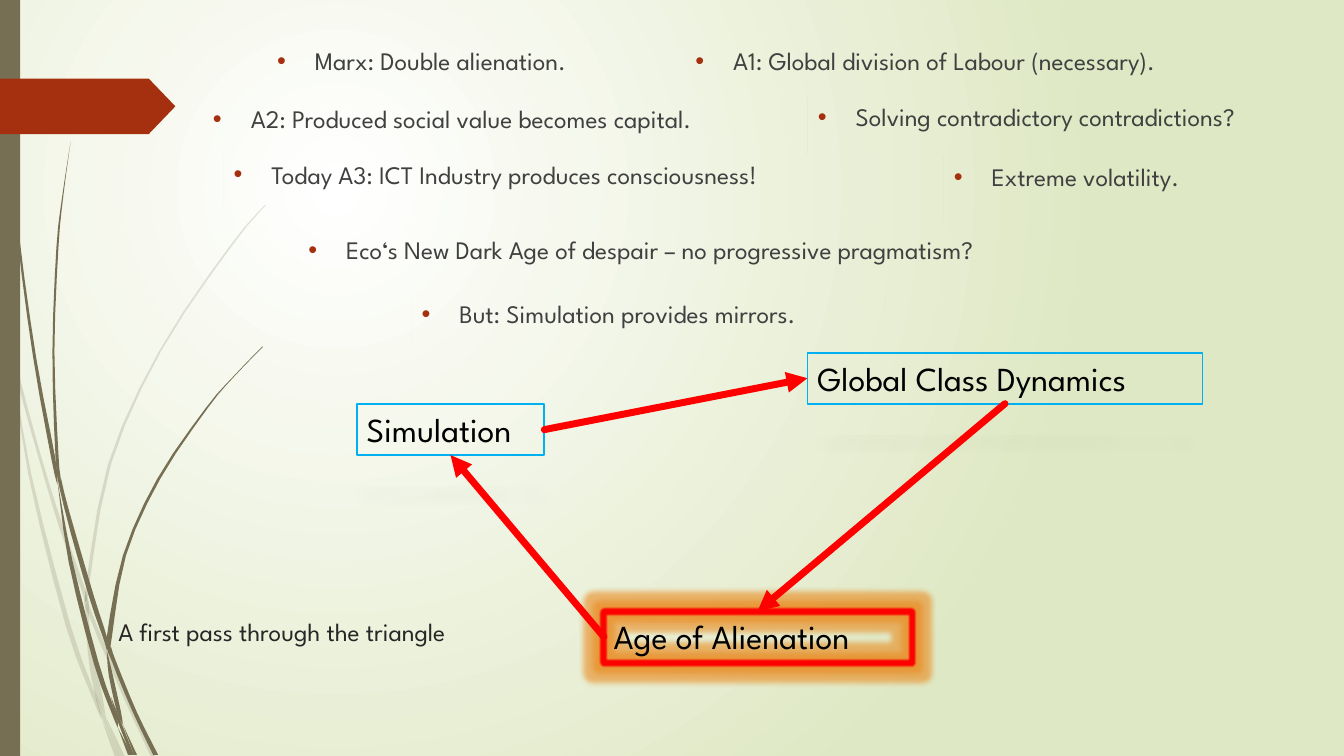
import pptx
import pptx.util
import pptx.dml.color
import pptx.enum.shapes
import pptx.enum.text
import pptx.oxml.ns
import lxml.etree

SHAPE = pptx.enum.shapes.MSO_SHAPE
LEFT, TOP, LOW, RIGHT = 1, 0, 2, 3

POINTS = [
    (26.5, 4, 36, 5.4, False, "Marx: Double alienation."),
    (68, 4, 57, 5.7, False, "A1: Global division of Labour (necessary)."),
    (20.15, 9.8, 60, 4.6, False, "A2: Produced social value becomes capital."),
    (80.15, 9.6, 53.2, 5.7, True, "Solving contradictory contradictions?"),
    (22.2, 15.3, 63.6, 5, True, "Today A3: ICT Industry produces consciousness!"),
    (93.65, 15.5, 29.4, 6.2, True, "Extreme volatility."),
    (29.6, 22.75, 89.8, 6.2, True, "Eco‘s New Dark Age of despair – no progressive pragmatism?"),
    (40.85, 29.1, 47, 5.5, True, "But: Simulation provides mirrors."),
]

PALE = [
    [(0, 0, 28.2), (0, .4, 29.9), (.7, .9, 32.2), (1.1, 1.1, 35)],
    [(1.4, 1.4, 34.5), (1.7, 2, 37.6), (3.7, 4, 45), (5.8, 6.2, 52.1), (8.1, 8.5, 58.6),
     (8.4, 8.4, 59.9)],
    [(8.8, 8.8, 59.6), (8.8, 9.2, 61), (12.3, 12.7, 69.3), (15, 15.5, 75.1)],
    [(10.5, 10.5, 71.1), (11.9, 12.4, 75.1)],
    [(1.1, 1.1, 35), (2.8, 3.1, 47), (6.5, 7, 62), (9.2, 9.6, 69.3), (10.1, 10.1, 71.4)],
    [(8.4, 8.4, 59.9), (8.5, 8.8, 61), (8.7, 9.1, 64.6), (9.3, 10, 68.3), (10.5, 10.5, 71.1)],
    [(31.2, 31.2, 15.3), (26.8, 26.9, 19.8), (22.8, 23, 24.4), (15.8, 16, 34.8), (10.7, 11, 46.1),
     (8.5, 8.8, 58.4), (8.8, 8.8, 59.6)],
    [(10.1, 10.1, 71.4), (11.4, 11.9, 75.1)],
    [(8.5, 8.5, 58.6), (8.4, 8.8, 59.9), (8.8, 8.8, 61)],
    [(9.3, 9.3, 68.3), (9.9, 10.3, 70.7), (11.9, 11.9, 75.1)],
]
DARK = [
    [(.3, .4, 0), (.7, .8, 11), (1.7, 1.9, 23.3), (3.3, 3.6, 35.5), (5.1, 5.5, 45.5),
     (5.7, 5.7, 48.1)],
    [(6, 6, 47.2), (6.4, 6.8, 50.5), (8.8, 9.3, 59.1), (10.2, 10.6, 63.2), (10.6, 10.6, 64.5)],
    [(11, 11, 64.1), (11.1, 11.5, 65.6), (13.2, 13.6, 70.7), (15.2, 15.7, 74.9)],
    [(5.7, 5.7, 47.7), (6.8, 7.2, 55.7), (9.3, 9.8, 65.8), (11.1, 11.5, 70.8), (11.7, 11.7, 72.2)],
    [(7, 7, 14.1), (6.2, 6.3, 19.3), (5.6, 5.8, 24.5), (5.2, 5.4, 34.9), (5.5, 5.8, 45.1),
     (6, 6, 47.2)],
    [(12.2, 12.2, 71.9), (13.3, 13.6, 74.9)],
    [(5.5, 5.5, 44.9), (5.7, 6, 47.4), (6.4, 6.4, 50.5)],
    [(26, 26.1, 34.4), (23.1, 23.2, 37.4), (20.4, 20.6, 40.5), (15.6, 15.9, 47.5),
     (12.2, 12.5, 55.1), (10.6, 11.1, 63.2), (11, 11, 64.1)],
    [(11.7, 11.7, 72.2), (12.7, 13.1, 74.9)],
    [(10.6, 10.6, 64.5), (10.8, 11.2, 67), (11.6, 12, 70.6), (12.2, 12.2, 71.9)],
    [(10.6, 10.6, 63.1), (10.6, 11, 64.3), (11.1, 11.1, 65.6)],
    [(11, 11, 69.1), (11.7, 12, 71.6), (13, 13.3, 74.9)],
]


def hue(code):
    return pptx.dml.color.RGBColor.from_string(code)


def cell(count):
    return pptx.util.Emu(round(count * 91440))


def tag(parent, name, **attrs):
    node = lxml.etree.SubElement(parent, pptx.oxml.ns.qn(name))
    for key, value in attrs.items():
        node.set(key, str(value))
    return node


def tint(parent, code, alpha):
    tag(tag(parent, "a:srgbClr", val=code), "a:alpha", val=alpha * 1000)


def write(shape, text, size=18, color="404040", font="League Spartan", bullet=None):
    frame = shape.text_frame
    frame.word_wrap = True
    frame.vertical_anchor = pptx.enum.text.MSO_ANCHOR.TOP
    para = frame.paragraphs[0]
    para.alignment = pptx.enum.text.PP_ALIGN.LEFT
    run = para.add_run()
    run.text = text
    run.font.size = pptx.util.Pt(size)
    run.font.name = font
    run.font.color.rgb = hue(color)
    if bullet:
        para.space_before = pptx.util.Pt(10)
        props = para._p.get_or_add_pPr()
        props.set("marL", str(cell(3.75)))
        props.set("indent", str(-cell(3.75)))
        tag(tag(props, "a:buClr"), "a:srgbClr", val=bullet)
        tag(props, "a:buFont", typeface="Arial")
        tag(props, "a:buChar", char="•")


def smooth(knots, steps=3):
    ends = [knots[0], *knots, knots[-1]]
    for a, b, c, d in zip(ends, ends[1:], ends[2:], ends[3:]):
        for step in range(steps):
            t = step / steps
            yield [q + t / 2 * (r - p + t * (2 * p - 5 * q + 4 * r - s
                                             + t * (3 * q - p - 3 * r + s)))
                   for p, q, r, s in zip(a, b, c, d)]
    yield knots[-1]


class Deck:
    olive, rust, red, sky = "766F54", "A53010", "FF0000", "00B0F0"
    white, sage = "FFFFFF", "DFE8C4"

    def __init__(self):
        self.show = pptx.Presentation()
        self.show.slide_width = cell(133.33)
        self.show.slide_height = cell(75)
        self.slide = self.show.slides.add_slide(self.show.slide_layouts[6])
        self.shapes = self.slide.shapes

    def ground(self):
        fill = self.slide.background.fill
        fill.gradient()
        for place, (stop, code) in enumerate(zip(fill.gradient_stops, (self.white, self.sage))):
            stop.color.rgb = hue(code)
            stop.position = place
        grad = self.slide.element.find(".//" + pptx.oxml.ns.qn("a:gradFill"))
        grad.remove(grad.find(pptx.oxml.ns.qn("a:lin")))
        tag(tag(grad, "a:path", path="circle"), "a:fillToRect",
            l=50000, t=50000, r=100000, b=100000)

    def paint(self, shape, code):
        shape.shadow.inherit = False
        shape.line.fill.background()
        shape.fill.solid()
        shape.fill.fore_color.rgb = hue(code)

    def block(self, kind, x, y, w, h, code):
        shape = self.shapes.add_shape(kind, cell(x), cell(y), cell(w), cell(h))
        self.paint(shape, code)
        return shape

    def blade(self, knots, alpha=100):
        rows = list(smooth(knots))
        edge = [(cell(a), cell(y)) for a, b, y in rows]
        edge += [(cell(b), cell(y)) for a, b, y in reversed(rows)]
        pen = self.shapes.build_freeform(*edge[0])
        pen.add_line_segments(edge[1:], close=True)
        shape = pen.convert_to_shape()
        self.paint(shape, self.olive)
        if alpha < 100:
            color = shape.element.spPr.find(".//" + pptx.oxml.ns.qn("a:srgbClr"))
            tag(color, "a:alpha", val=alpha * 1000)

    def note(self, x, y, w, h, text, cover=False, **style):
        box = self.shapes.add_textbox(cell(x), cell(y), cell(w), cell(h))
        if cover:
            spot = box.element.spPr.find(pptx.oxml.ns.qn("a:noFill"))
            box.element.spPr.remove(spot)
            box.element.set("useBgFill", "1")
        write(box, text, **style)

    def node(self, x, y, w, text, code, weight, glow=False):
        box = self.shapes.add_shape(SHAPE.RECTANGLE, cell(x), cell(y), cell(w), cell(5.05))
        box.fill.background()
        box.line.color.rgb = hue(code)
        box.line.width = pptx.util.Pt(weight)
        box.shadow.inherit = False
        effect = box.element.spPr.find(pptx.oxml.ns.qn("a:effectLst"))
        if glow:
            tint(tag(effect, "a:glow", rad=pptx.util.Pt(8)), "EA8A1E", 60)
            tag(effect, "a:softEdge", rad=pptx.util.Pt(1))
        else:
            shade = tag(effect, "a:outerShdw", blurRad=pptx.util.Pt(12), dist=pptx.util.Pt(25),
                        dir=5400000, sx=90000, sy=-19000, rotWithShape=0)
            tint(shade, "000000", 15)
        write(box, text, size=24, color="000000")
        return box

    def arrow(self, start, out, end, into):
        line = self.shapes.add_connector(pptx.enum.shapes.MSO_CONNECTOR.STRAIGHT, 0, 0, 0, 0)
        line.begin_connect(start, out)
        line.end_connect(end, into)
        line.line.color.rgb = hue(self.red)
        line.line.width = pptx.util.Pt(5)
        stroke = line.line._get_or_add_ln()
        stroke.set("cap", "rnd")
        tag(stroke, "a:tailEnd", type="triangle")
        tag(line.element.spPr, "a:effectLst")


def main():
    deck = Deck()
    deck.ground()
    for alpha, group in ((20, PALE), (100, DARK)):
        for knots in group:
            deck.blade(knots, alpha)
    deck.block(SHAPE.RECTANGLE, 0, 0, 2, 75, deck.olive)
    flag = deck.block(SHAPE.PENTAGON, 0, 7.8, 17.4, 5.5, deck.rust)
    flag.adjustments[0] = 0.48
    deck.note(10.75, 60.65, 41.6, 5.4, "A first pass through the triangle", color="262626")
    for x, y, w, h, cover, text in POINTS:
        deck.note(x, y, w, h, text, cover, bullet=deck.rust)
    mirror = deck.node(35.4, 40.1, 18.6, "Simulation", deck.sky, 1.25)
    world = deck.node(80.1, 35, 39.2, "Global Class Dynamics", deck.sky, 1.25)
    age = deck.node(59.9, 60.65, 30.5, "Age of Alienation", deck.red, 7, glow=True)
    deck.arrow(mirror, RIGHT, world, LEFT)
    deck.arrow(world, LOW, age, TOP)
    deck.arrow(age, LEFT, mirror, LOW)
    deck.show.save("out.pptx")


if __name__ == "__main__":
    main()
